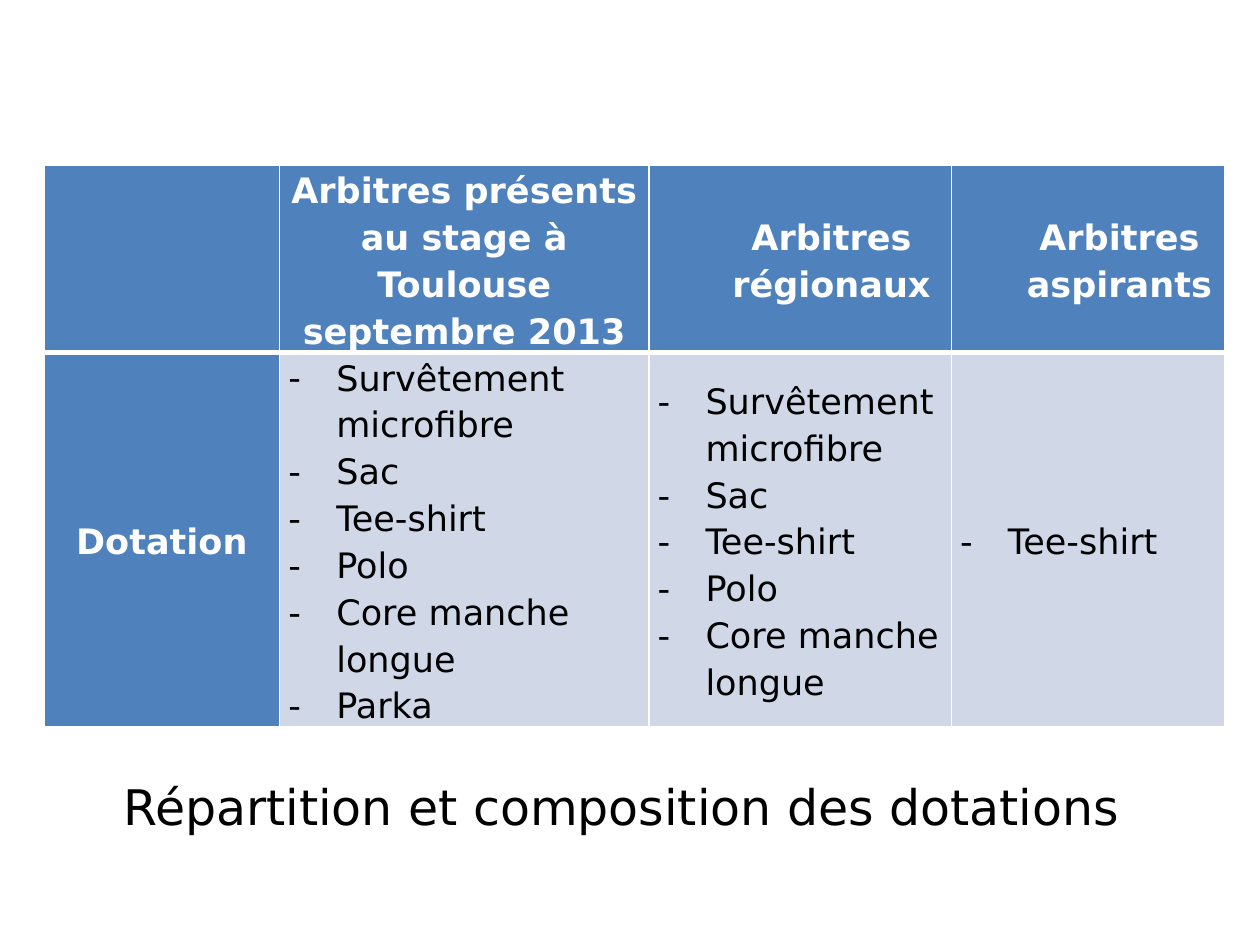
"""Build the slide showing how kit is allotted to each group of referees."""
import dataclasses

import lxml.etree
import pptx
import pptx.dml.color
import pptx.enum.text
import pptx.oxml.ns
import pptx.util

Inches = pptx.util.Inches
Pt = pptx.util.Pt
qn = pptx.oxml.ns.qn
ALIGN = pptx.enum.text.PP_ALIGN
MIDDLE = pptx.enum.text.MSO_ANCHOR.MIDDLE


@dataclasses.dataclass(frozen=True)
class Theme:
    font: str = "DejaVu Sans"
    header: str = "4F81BD"
    body: str = "D0D8E8"
    light: str = "FFFFFF"
    dark: str = "000000"
    cell_size: int = 20
    caption_size: int = 28
    thin: int = 1
    thick: int = 3


def rgb(color):
    return pptx.dml.color.RGBColor.from_string(color)


def write(frame, text, *, font, size, color, bold=False, align=ALIGN.LEFT,
          spacing=None, margin=0, bullet=None):
    frame.word_wrap = True
    frame.text = text
    for paragraph in frame.paragraphs:
        paragraph.alignment = align
        if spacing:
            paragraph.line_spacing = spacing
        properties = paragraph._p.get_or_add_pPr()
        properties.set("marL", str(Inches(margin)))
        properties.set("indent", str(-Inches(margin) if bullet else 0))
        if bullet:
            lxml.etree.SubElement(properties, qn("a:buFont")).set("typeface", font)
            lxml.etree.SubElement(properties, qn("a:buChar")).set("char", bullet)
        for run in paragraph.runs:
            run.font.name = font
            run.font.size = Pt(size)
            run.font.bold = bold
            run.font.color.rgb = rgb(color)


class SlideBuilder:
    def __init__(self, slide, theme):
        self.slide = slide
        self.theme = theme

    def caption(self, text, left, top, width, height):
        box = self.slide.shapes.add_textbox(*map(Inches, (left, top, width, height)))
        write(box.text_frame, text, font=self.theme.font, size=self.theme.caption_size,
              color=self.theme.dark, align=ALIGN.CENTER)

    def border(self, cell, side, width):
        line = lxml.etree.SubElement(cell._tc.get_or_add_tcPr(), qn(f"a:ln{side}"))
        line.set("w", str(Pt(width)))
        fill = lxml.etree.SubElement(line, qn("a:solidFill"))
        lxml.etree.SubElement(fill, qn("a:srgbClr")).set("val", self.theme.light)

    def cell(self, cell, text, is_header, shared_side, **style):
        theme = self.theme
        for side in "LRTB":
            self.border(cell, side, theme.thick if side == shared_side else theme.thin)
        cell.fill.solid()
        cell.fill.fore_color.rgb = rgb(theme.header if is_header else theme.body)
        cell.vertical_anchor = MIDDLE
        cell.margin_left = cell.margin_right = Inches(0.07)
        cell.margin_top = cell.margin_bottom = 0
        write(cell.text_frame, text, font=theme.font, size=theme.cell_size,
              color=theme.light if is_header else theme.dark, bold=is_header,
              spacing=1.15, **style)

    def table(self, left, top, widths, heights, headings, label, kits):
        frame = self.slide.shapes.add_table(
            len(heights), len(widths),
            *map(Inches, (left, top, sum(widths), sum(heights))))
        grid = frame.table
        for column, width in zip(grid.columns, widths):
            column.width = Inches(width)
        for row, height in zip(grid.rows, heights):
            row.height = Inches(height)
        for index, heading in enumerate(headings):
            self.cell(grid.cell(0, index), heading, True, "B", align=ALIGN.CENTER,
                      margin=0.5 if index > 1 else 0)
        self.cell(grid.cell(1, 0), label, True, "T", align=ALIGN.CENTER)
        for index, kit in enumerate(kits, 1):
            self.cell(grid.cell(1, index), "\n".join(kit), False, "T",
                      margin=0.38, bullet="-")


def main():
    deck = pptx.Presentation()
    deck.slide_width, deck.slide_height = Inches(10), Inches(7.5)
    builder = SlideBuilder(deck.slides.add_slide(deck.slide_layouts[6]), Theme())

    regional_kit = ["Survêtement microfibre", "Sac", "Tee-shirt", "Polo",
                    "Core manche longue"]
    builder.table(
        0.35, 1.31, widths=[1.87, 2.93, 2.4, 2.17], heights=[1.48, 2.96],
        headings=["", "Arbitres présents au stage à Toulouse septembre 2013",
                  "Arbitres régionaux", "Arbitres aspirants"],
        label="Dotation",
        kits=[regional_kit + ["Parka"], regional_kit, ["Tee-shirt"]])
    builder.caption("Répartition et composition des dotations", 0.56, 6.11, 8.74, 0.57)
    deck.save("out.pptx")


if __name__ == "__main__":
    main()
